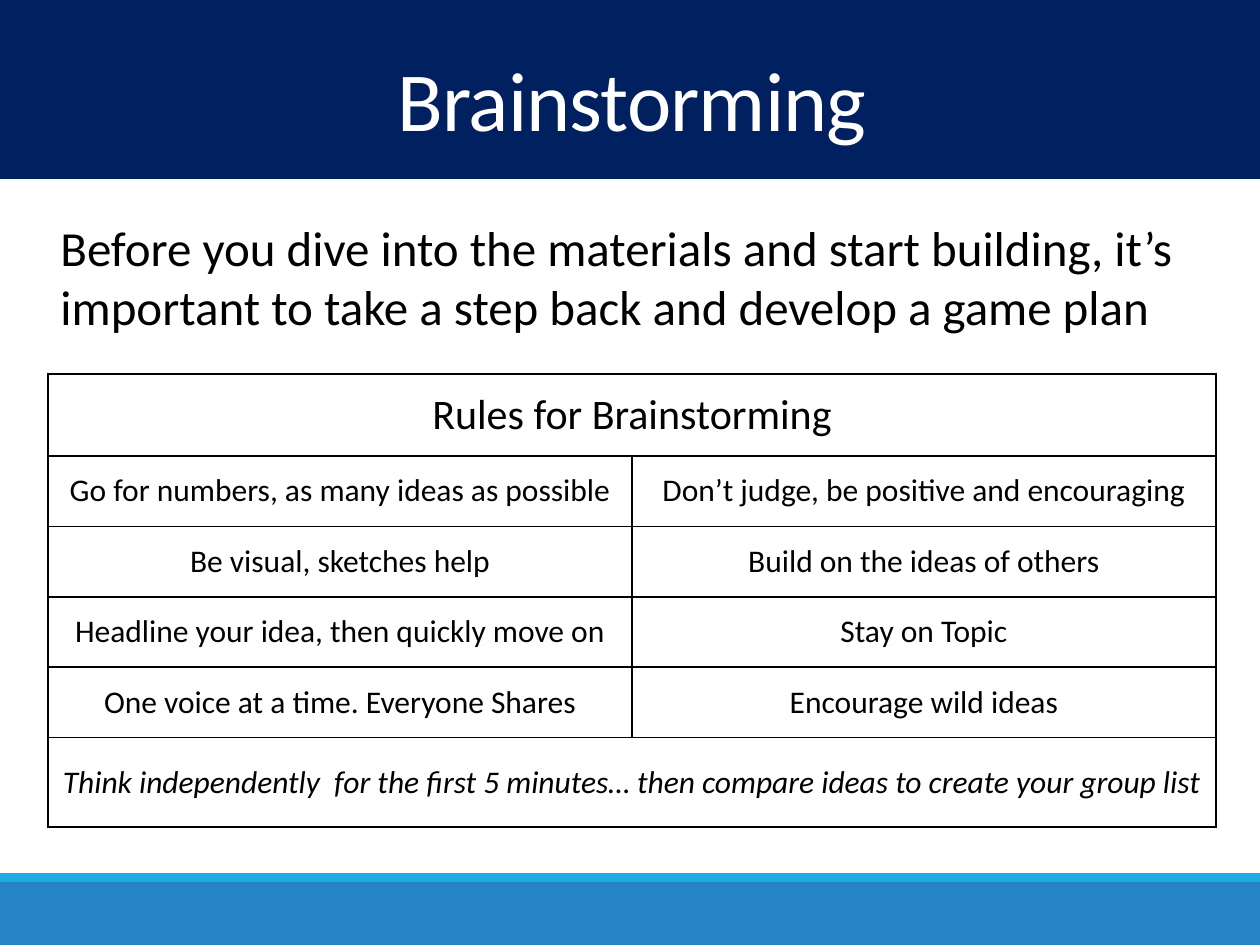
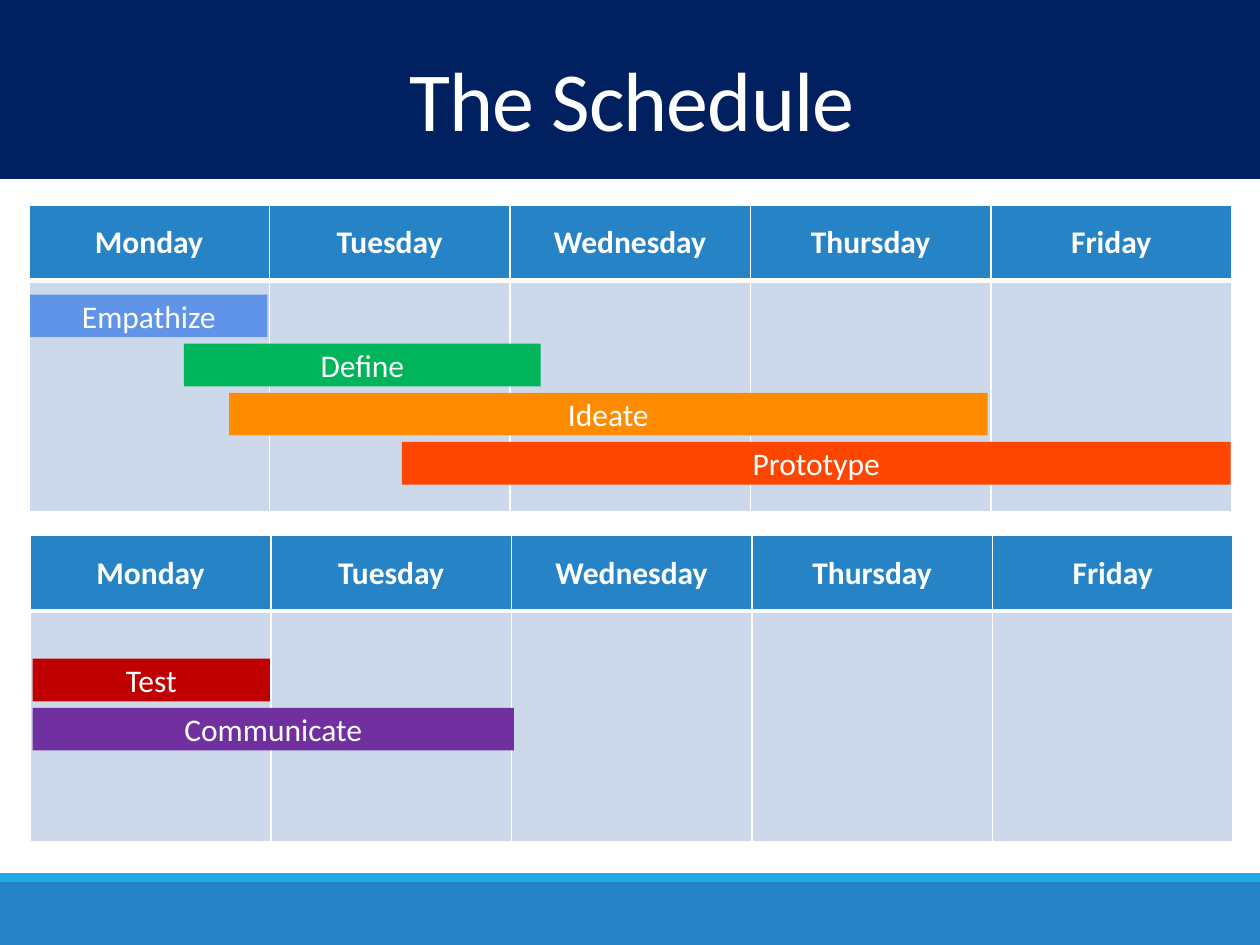
"""Build the brainstorming and schedule slides."""
from dataclasses import dataclass

from lxml.etree import SubElement
from pptx import Presentation
from pptx.dml.color import RGBColor
from pptx.enum.shapes import MSO_SHAPE
from pptx.enum.text import MSO_ANCHOR, PP_ALIGN
from pptx.oxml.ns import qn
from pptx.util import Cm, Pt


@dataclass(frozen=True)
class Theme:
    """Colours, font and type sizes of the deck."""
    font: str = "Calibri"
    white: str = "FFFFFF"
    black: str = "000000"
    navy: str = "002060"
    blue: str = "2683C6"
    cyan: str = "1CADE4"
    pale: str = "CDD9EA"
    cornflower: str = "6094E8"
    green: str = "00B45C"
    orange: str = "FF8C00"
    vermilion: str = "FF4600"
    red: str = "C00000"
    purple: str = "7030A0"
    title_size: int = 48
    lead_size: int = 28
    heading_size: int = 24
    text_size: int = 18


THEME = Theme()
WIDTH, HEIGHT = 25.4, 19.05
DAYS = ["Monday", "Tuesday", "Wednesday", "Thursday", "Friday"]
RULES = [
    ("Go for numbers, as many ideas as possible", "Don’t judge, be positive and encouraging"),
    ("Be visual, sketches help", "Build on the ideas of others"),
    ("Headline your idea, then quickly move on", "Stay on Topic"),
    ("One voice at a time. Everyone Shares", "Encourage wild ideas"),
]
WEEKS = [
    (0.58, 4.14, 5.94, [
        ("Empathize", 0.61, 4.78, THEME.cornflower),
        ("Define", 3.71, 7.19, THEME.green),
        ("Ideate", 4.62, 15.29, THEME.orange),
        ("Prototype", 8.1, 16.71, THEME.vermilion),
    ]),
    (0.61, 10.8, 13.28, [
        ("Test", 0.66, 4.78, THEME.red),
        ("Communicate", 0.66, 9.7, THEME.purple),
    ]),
]
BAR_HEIGHT, BAR_STEP = 0.86, 0.99


class Deck:
    """Draws styled elements on the current slide."""

    def __init__(self, presentation, theme):
        """Keep the presentation and its theme."""
        self.presentation = presentation
        self.theme = theme
        self.slide = None

    def add_slide(self, title):
        """Start a slide with its bands and title."""
        theme = self.theme
        self.slide = self.presentation.slides.add_slide(self.presentation.slide_layouts[6])
        self.rectangle(0, 17.78, WIDTH, 1.27, theme.blue)
        self.rectangle(0, 17.6, WIDTH, 0.18, theme.cyan)
        self.rectangle(0, 0, WIDTH, 3.61, theme.navy)
        paragraph = self.text(0.08, 1.07, 25.32, 2.13, title, theme.title_size, theme.white,
                              PP_ALIGN.CENTER, MSO_ANCHOR.MIDDLE)
        paragraph.line_spacing = 0.85
        paragraph.runs[0]._r.get_or_add_rPr().set("spc", "-50")

    def set_text(self, frame, text, size, color, align=PP_ALIGN.CENTER, bold=False, italic=False):
        """Put one styled paragraph into a text frame."""
        paragraph = frame.paragraphs[0]
        paragraph.text = text
        paragraph.alignment = align
        font = paragraph.font
        font.name, font.size = self.theme.font, Pt(size)
        font.bold, font.italic = bold, italic
        font.color.rgb = RGBColor.from_string(color)
        return paragraph

    def text(self, left, top, width, height, text, size, color,
             align=PP_ALIGN.LEFT, anchor=MSO_ANCHOR.TOP):
        """Add a wrapping text box and return its paragraph."""
        box = self.slide.shapes.add_textbox(Cm(left), Cm(top), Cm(width), Cm(height))
        box.text_frame.word_wrap = True
        box.text_frame.vertical_anchor = anchor
        return self.set_text(box.text_frame, text, size, color, align)

    def rectangle(self, left, top, width, height, color, label=None):
        """Add a flat rectangle with an optional label."""
        shape = self.slide.shapes.add_shape(
            MSO_SHAPE.RECTANGLE, Cm(left), Cm(top), Cm(width), Cm(height))
        shape.shadow.inherit = False
        shape.fill.solid()
        shape.fill.fore_color.rgb = RGBColor.from_string(color)
        shape.line.fill.background()
        if label:
            shape.text_frame.vertical_anchor = MSO_ANCHOR.MIDDLE
            self.set_text(shape.text_frame, label, self.theme.text_size, self.theme.white)

    def table(self, left, top, column_count, column_width, row_heights):
        """Add a plain table with equal columns."""
        frame = self.slide.shapes.add_table(
            len(row_heights), column_count, Cm(left), Cm(top),
            Cm(column_width * column_count), Cm(sum(row_heights)))
        table = frame.table
        table.first_row = table.horz_banding = False
        for column in table.columns:
            column.width = Cm(column_width)
        for row, height in zip(table.rows, row_heights):
            row.height = Cm(height)
        return table

    def style_cell(self, cell, border, fill=None, top=1, bottom=1):
        """Set the borders, fill and anchor of a cell."""
        properties = cell._tc.get_or_add_tcPr()
        for side, points in (("L", 1), ("R", 1), ("T", top), ("B", bottom)):
            line = SubElement(properties, qn(f"a:ln{side}"), w=str(Pt(points)))
            SubElement(SubElement(line, qn("a:solidFill")), qn("a:srgbClr"), val=border)
        if fill:
            cell.fill.solid()
            cell.fill.fore_color.rgb = RGBColor.from_string(fill)
        else:
            cell.fill.background()
        cell.vertical_anchor = MSO_ANCHOR.MIDDLE

    def rules_table(self, left, top, heading, rules, closing):
        """Add the rules between a full-width heading and closing row."""
        theme = self.theme
        table = self.table(left, top, 2, 11.77, [1.65] + [1.42] * len(rules) + [1.8])
        last = len(rules) + 1
        for cell in table.iter_cells():
            self.style_cell(cell, theme.black)
            cell.margin_left = cell.margin_right = Cm(0.18)
            cell.margin_top = cell.margin_bottom = Cm(0.18)
        for row in (0, last):
            table.cell(row, 0).merge(table.cell(row, 1))
        self.set_text(table.cell(0, 0).text_frame, heading, theme.heading_size, theme.black)
        for row, pair in enumerate(rules, 1):
            for column, rule in enumerate(pair):
                self.set_text(table.cell(row, column).text_frame, rule,
                              theme.text_size, theme.black)
        paragraph = self.set_text(table.cell(last, 0).text_frame, closing,
                                  theme.text_size, theme.black, italic=True)
        paragraph.space_before = Pt(10)

    def week(self, left, top, first_bar, bars):
        """Add a week grid and its stepped phase bars."""
        theme = self.theme
        table = self.table(left, top, len(DAYS), 4.85, [1.52, 4.65])
        for column, day in enumerate(DAYS):
            header = table.cell(0, column)
            self.style_cell(header, theme.white, theme.blue, bottom=3)
            self.set_text(header.text_frame, day, theme.text_size, theme.white, bold=True)
            self.style_cell(table.cell(1, column), theme.white, theme.pale, top=3)
        for index, (phase, start, width, color) in enumerate(bars):
            self.rectangle(start, first_bar + index * BAR_STEP, width, BAR_HEIGHT, color, phase)


def main():
    """Build and save the presentation."""
    presentation = Presentation()
    presentation.slide_width, presentation.slide_height = Cm(WIDTH), Cm(HEIGHT)
    deck = Deck(presentation, THEME)

    deck.add_slide("Brainstorming")
    deck.text(0.97, 4.27, 23.55, 2.64,
              "Before you dive into the materials and start building, it’s important "
              "to take a step back and develop a game plan", THEME.lead_size, THEME.black)
    deck.rules_table(0.97, 7.54, "Rules for Brainstorming", RULES,
                     "Think independently  for the first 5 minutes… "
                     "then compare ideas to create your group list")

    deck.add_slide("The Schedule")
    for week in WEEKS:
        deck.week(*week)

    presentation.save("out.pptx")


if __name__ == "__main__":
    main()
